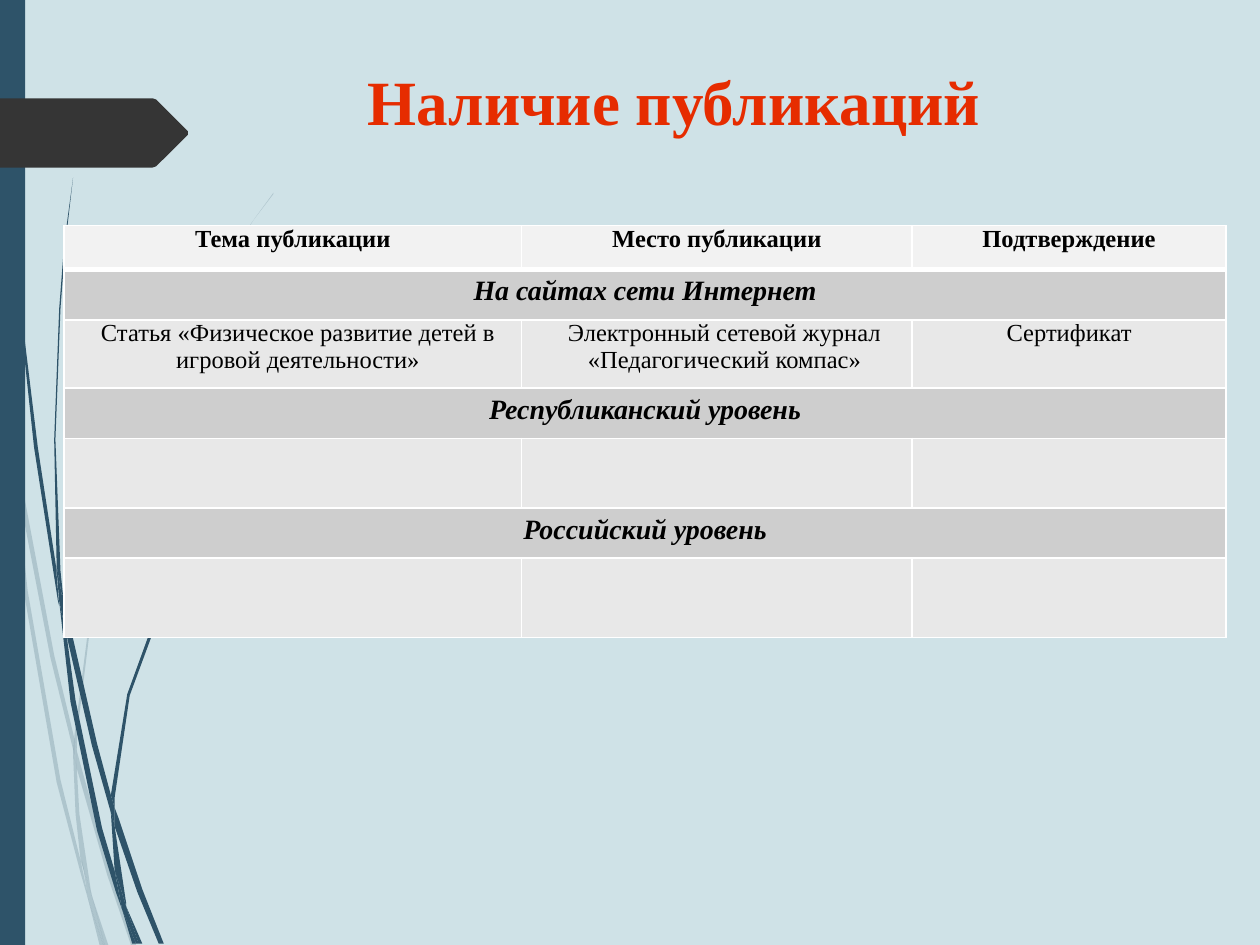
from lxml import etree
from pptx import Presentation
from pptx.dml.color import RGBColor
from pptx.enum.shapes import MSO_SHAPE
from pptx.enum.text import MSO_ANCHOR, PP_ALIGN
from pptx.oxml.ns import qn
from pptx.util import Inches, Pt

RECT = MSO_SHAPE.RECTANGLE
CENTER = PP_ALIGN.CENTER
MIDDLE = MSO_ANCHOR.MIDDLE
TOP = MSO_ANCHOR.TOP
FONT = "Times New Roman"
HEX = {
    "back": "CFE2E7", "stem": "2E5369", "arrow": "353535", "title": "E62C00",
    "text": "000000", "line": "FFFFFF",
    "head": "F2F2F2", "band": "CECECE", "cell": "E8E8E8",
}
INK = {name: RGBColor.from_string(code) for name, code in HEX.items()}
W, H = Inches(10), Inches(7.5)
UNIT = W // 1000

# Outlines in thousandths of the slide's width: x, y, x, y, ...
PALE = [
    (8, 350, 6, 322, 0, 282, 0, 299, 7, 344),
    (40, 522, 59, 599, 59, 586, 43, 520, 10, 345, 12, 376),
    (64, 607, 61, 596, 61, 610, 85, 694, 104, 750, 108, 750, 88, 692),
    (83, 750, 86, 750, 73, 711),
    (64, 683, 48, 619, 22, 469, 12, 376, 8, 350, 19, 470, 45, 621, 64, 693,
     70, 714, 69, 707),
    (58, 599, 60, 646, 64, 683, 67, 692, 73, 711, 72, 706, 63, 646, 61, 610,
     61, 608),
    (61, 584, 76, 462, 111, 349, 159, 245, 187, 198, 201, 175, 217, 154,
     217, 153, 201, 175, 186, 197, 158, 244, 110, 348, 75, 461, 59, 584,
     59, 586, 61, 596),
    (70, 714, 79, 750, 82, 750),
    (61, 608, 61, 610, 61, 596, 59, 586, 58, 599),
    (67, 692, 65, 683, 69, 707, 70, 714, 82, 750, 83, 750, 73, 711),
]
DARK = [
    (5, 110, 14, 233, 27, 355, 46, 477, 47, 481, 45, 457, 45, 453, 30, 355,
     15, 232, 6, 109, 4, 48, 3, 0, 2, 0, 3, 48),
    (73, 592, 88, 645, 88, 633, 88, 631, 77, 590, 50, 472, 53, 505),
    (94, 649, 91, 641, 91, 656, 109, 708, 126, 749, 130, 749, 113, 706),
    (91, 691, 81, 657, 60, 556, 53, 505, 47, 477, 56, 557, 77, 659, 92, 708,
     97, 722, 96, 717),
    (50, 472, 48, 453, 44, 349, 48, 245, 52, 193, 58, 141, 51, 193, 47, 245,
     43, 349, 45, 449, 49, 472),
    (110, 749, 113, 749, 100, 719),
    (47, 477, 53, 505, 50, 472, 49, 472, 45, 449, 45, 453),
    (91, 633, 103, 552, 131, 476, 169, 406, 191, 374, 203, 359, 216, 344,
     215, 344, 203, 358, 191, 373, 168, 405, 129, 474, 101, 551, 88, 631,
     91, 641),
    (97, 722, 105, 749, 108, 749),
    (88, 645, 91, 691, 96, 706, 100, 719, 100, 716, 91, 656, 90, 651),
    (88, 645, 90, 651, 91, 656, 91, 641, 88, 631, 88, 633),
    (96, 706, 91, 691, 96, 717, 97, 722, 108, 749, 110, 749, 100, 719),
]
ARROW = (0, 78, 121, 78, 124, 79, 149, 104, 149, 107, 124, 132, 121, 133,
         0, 133)

COLS = [3.63, 3.1, 2.49]
ROWS = [
    ("head", 0.35, ["Тема публикации", "Место публикации", "Подтверждение"]),
    ("band", 0.4, ["На сайтах сети Интернет"]),
    ("cell", 0.54, ["Статья «Физическое развитие детей в игровой деятельности»",
                    "Электронный сетевой журнал «Педагогический компас»",
                    "Сертификат"]),
    ("band", 0.4, ["Республиканский уровень"]),
    ("cell", 0.55, []),
    ("band", 0.4, ["Российский уровень"]),
    ("cell", 0.63, []),
]
INDENT = [0.08, 0.12, 0]


def paint(shape, color):
    shape.shadow.inherit = False
    shape.fill.solid()
    shape.fill.fore_color.rgb = INK[color]
    shape.line.fill.background()


def outline(flat, color):
    """Draw a closed shape through a flat run of x and y values."""
    points = list(zip(flat[::2], flat[1::2]))
    pen = slide.shapes.build_freeform(*points[0], scale=UNIT)
    pen.add_line_segments(points[1:], close=True)
    shape = pen.convert_to_shape()
    paint(shape, color)
    return shape


deck = Presentation()
deck.slide_width, deck.slide_height = W, H
slide = deck.slides.add_slide(deck.slide_layouts[5])
slide.background.fill.solid()
slide.background.fill.fore_color.rgb = INK["back"]

# Grass stems, side bar and arrow tab
for flat in PALE:
    stem = outline(flat, "stem")
    tint = stem.fill._xPr.find(qn("a:solidFill"))[0]
    etree.SubElement(tint, qn("a:alpha"), val="20000")
for flat in DARK:
    outline(flat, "stem")
paint(slide.shapes.add_shape(RECT, 0, 0, int(W * 0.02), H), "stem")
outline(ARROW, "arrow")

# Title
title = slide.shapes.title
title.left, title.top = Inches(2.74), Inches(0.44)
title.width, title.height = Inches(5.22), Inches(0.71)
frame = title.text_frame
frame.text = "Наличие публикаций"
frame.word_wrap = True
frame.vertical_anchor = MIDDLE
para = frame.paragraphs[0]
para.alignment = CENTER
font = para.runs[0].font
font.name, font.size, font.bold = FONT, Pt(36), True
font.color.rgb = INK["title"]

# Table of publications
grid = slide.shapes.add_table(
    len(ROWS), len(COLS), Inches(0.51), Inches(1.79),
    Inches(sum(COLS)), Inches(sum(row[1] for row in ROWS))).table
for col, width in zip(grid.columns, COLS):
    col.width = Inches(width)
for r, (kind, height, texts) in enumerate(ROWS):
    grid.rows[r].height = Inches(height)
    for c in range(len(COLS)):
        cell = grid.cell(r, c)
        props = cell._tc.get_or_add_tcPr()
        for side in "LRTB":
            thick = (side == "B" and r == 0) or (side == "T" and r == 1)
            edge = etree.SubElement(props, qn("a:ln" + side),
                                    w=str(Pt(3 if thick else 1)))
            fill = etree.SubElement(edge, qn("a:solidFill"))
            etree.SubElement(fill, qn("a:srgbClr"), val=HEX["line"])
        cell.fill.solid()
        cell.fill.fore_color.rgb = INK[kind]
    if kind == "band":
        grid.cell(r, 0).merge(grid.cell(r, len(COLS) - 1))
    for c, text in enumerate(texts):
        cell = grid.cell(r, c)
        cell.vertical_anchor = TOP
        if kind != "band":
            cell.margin_left = cell.margin_right = Inches(0.07)
            cell.margin_top = cell.margin_bottom = 0
        cell.text_frame.text = text
        para = cell.text_frame.paragraphs[0]
        para.alignment = CENTER
        if kind == "cell":
            para._p.get_or_add_pPr().set("marL", str(Inches(INDENT[c])))
        font = para.runs[0].font
        font.name = FONT
        font.size = Pt(16 if kind == "band" else 14)
        font.bold = kind != "cell"
        font.italic = kind == "band"
        font.color.rgb = INK["text"]

deck.save("out.pptx")
